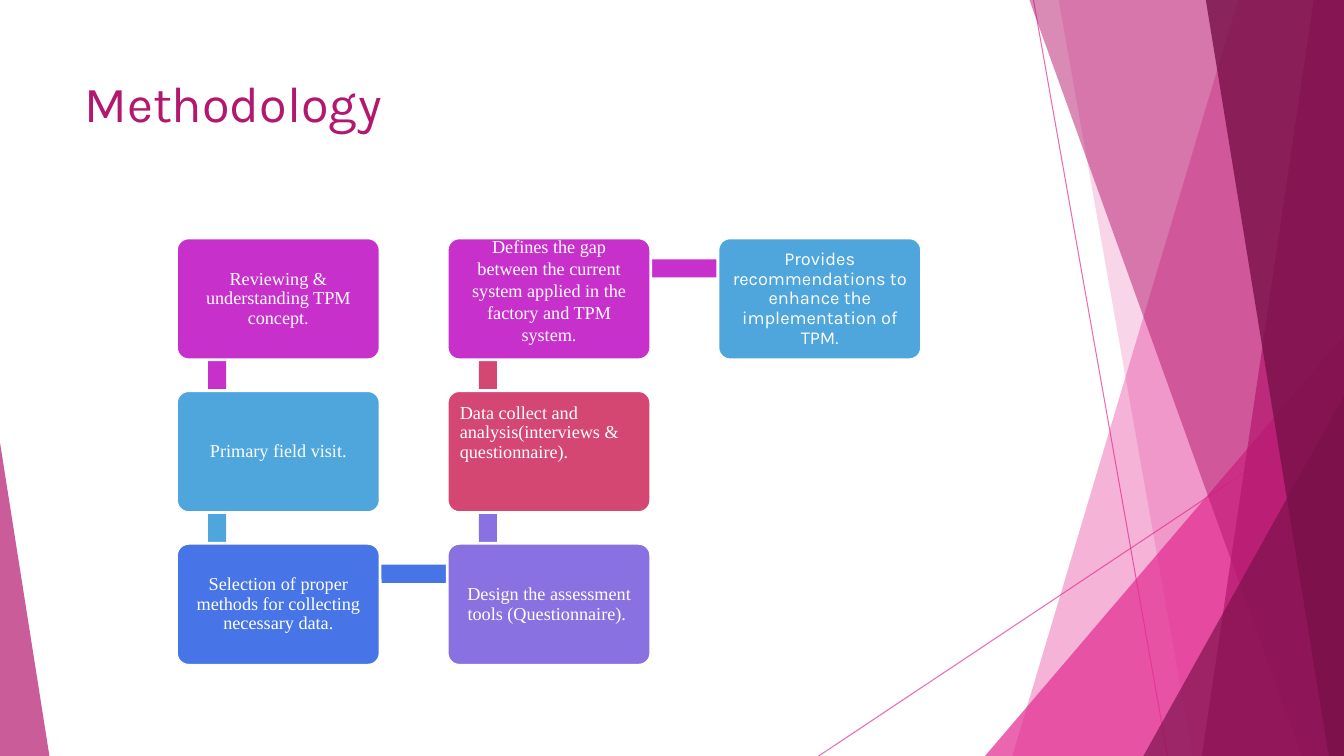
from lxml import etree
from pptx import Presentation
from pptx.dml.color import RGBColor
from pptx.enum.shapes import MSO_CONNECTOR, MSO_SHAPE
from pptx.enum.text import MSO_ANCHOR, PP_ALIGN
from pptx.oxml.ns import qn
from pptx.util import Inches, Pt

STRAIGHT = MSO_CONNECTOR.STRAIGHT
RECT, ROUND_RECT = MSO_SHAPE.RECTANGLE, MSO_SHAPE.ROUNDED_RECTANGLE
TRIANGLE = MSO_SHAPE.ISOSCELES_TRIANGLE
TOP, MIDDLE = MSO_ANCHOR.TOP, MSO_ANCHOR.MIDDLE
LEFT, CENTER = PP_ALIGN.LEFT, PP_ALIGN.CENTER

PINK = RGBColor(0xE3, 0x2D, 0x91)
BERRY = RGBColor(0xB4, 0x18, 0x6E)
PLUM = RGBColor(0x78, 0x10, 0x49)
MAGENTA = RGBColor(0xC8, 0x30, 0xCC)
SKY = RGBColor(0x4E, 0xA6, 0xDC)
BLUE = RGBColor(0x47, 0x75, 0xE7)
VIOLET = RGBColor(0x89, 0x71, 0xE1)
ROSE = RGBColor(0xD5, 0x47, 0x73)
WHITE = RGBColor(0xFF, 0xFF, 0xFF)
SERIF, SANS = "Times New Roman", "Karla"

SLIDE_W, SLIDE_H = 13.33, 7.5

# Column, row, colour, text and text format of each step, in reading order
STEPS = [
    (0, 0, MAGENTA, "Reviewing & understanding TPM concept.", {}),
    (0, 1, SKY, "Primary field visit.", {}),
    (0, 2, BLUE, "Selection of proper methods for collecting necessary data.", {}),
    (1, 2, VIOLET, "Design the assessment tools (Questionnaire). ", {}),
    (1, 1, ROSE, "Data collect and analysis(interviews & questionnaire).",
     {"align": LEFT, "anchor": TOP}),
    (1, 0, MAGENTA, "Defines the gap between the current system applied in the "
     "factory and TPM system.", {"spacing": 1.0, "bottom": 0.26}),
    (2, 0, SKY, "Provides recommendations to enhance the implementation of TPM.",
     {"font": SANS}),
]


def set_alpha(color_parent, percent):
    """Make the solid colour inside the given element partly transparent."""
    color = color_parent.find(".//" + qn("a:srgbClr"))
    etree.SubElement(color, qn("a:alpha")).set("val", str(percent * 1000))


def paint(sp, color, alpha=100):
    sp.shadow.inherit = False
    sp.fill.solid()
    sp.fill.fore_color.rgb = color
    sp.line.fill.background()
    if alpha < 100:
        set_alpha(sp._element.spPr, alpha)


def add_block(s, kind, box, color, alpha=100, adjust=None):
    sp = s.shapes.add_shape(kind, *(Inches(v) for v in box))
    if adjust is not None:
        sp.adjustments[0] = adjust
    paint(sp, color, alpha)
    return sp


def write(sp, text, size=13, font=SERIF, color=WHITE, align=CENTER,
          anchor=MIDDLE, spacing=0.9, side=0.09, top=0.09, bottom=0.09):
    tf = sp.text_frame
    tf.word_wrap = True
    tf.vertical_anchor = anchor
    tf.margin_left = tf.margin_right = Inches(side)
    tf.margin_top, tf.margin_bottom = Inches(top), Inches(bottom)
    p = tf.paragraphs[0]
    p.alignment, p.line_spacing = align, spacing
    r = p.add_run()
    r.text = text
    r.font.size, r.font.name = Pt(size), font
    r.font.color.rgb = color


def add_thin_line(s, x1, y1, x2, y2):
    line = s.shapes.add_connector(STRAIGHT, *(Inches(v) for v in (x1, y1, x2, y2)))
    line.line.color.rgb = PINK
    line.line.width = Pt(0.75)
    set_alpha(line.line._ln, 70)
    etree.SubElement(line._element.spPr, qn("a:effectLst"))


def add_facets(s, box):
    """Translucent facets that all share the right edge of the box."""
    x, y, w, h = box
    right, base = x + w, y + h

    def slanted(top_w, base_w, color, alpha):
        corners = [(right - top_w, y), (right, y), (right, base), (right - base_w, base)]
        points = [(Inches(px), Inches(py)) for px, py in corners]
        outline = s.shapes.build_freeform(*points[0])
        outline.add_line_segments(points[1:], close=True)
        paint(outline.convert_to_shape(), color, alpha)

    def wedge(width, height, color, alpha):
        add_block(s, TRIANGLE, (right - width, base - height, width, height),
                  color, alpha, adjust=1)

    add_thin_line(s, right - 3.08, y, right - 1.75, base)
    add_thin_line(s, right, y + 4.03, x, base)
    slanted(1.05, 3.29, PINK, 36)
    slanted(2.83, 1.5, PINK, 20)
    wedge(3.56, 4.17, PINK, 72)
    slanted(3.12, 0.42, BERRY, 50)
    slanted(0.3, 1.41, BERRY, 70)
    slanted(1.37, 0.15, PLUM, 80)
    wedge(1.99, 3.57, PLUM, 66)


def add_left_wedge(s, box):
    add_block(s, TRIANGLE, box, BERRY, 70, adjust=0)


def add_title(s, box, text):
    sp = s.shapes.add_textbox(*(Inches(v) for v in box))
    write(sp, text, size=36, font=SANS, color=BERRY, align=LEFT, anchor=TOP,
          spacing=1.0, side=0.1, top=0.05, bottom=0.05)


def add_flow(s, box):
    """Snake of steps on a 3 by 3 grid, each joined to the next by a bar."""
    x, y, w, h = box
    step_w, step_h, bar = 2.02, 1.21, 0.18
    pitch_x, pitch_y = (w - step_w) / 2, (h - step_h) / 2

    def corner(step):
        return x + step[0] * pitch_x, y + step[1] * pitch_y

    for step, following in zip(STEPS, STEPS[1:] + [None]):
        left, top = corner(step)
        color, text, style = step[2:]
        if following:
            next_left, next_top = corner(following)
            dx, dy = abs(next_left - left), abs(next_top - top)
            bar_x = min(left, next_left) + step_w / 5 - (bar / 2 if dy else 0)
            bar_y = min(top, next_top) + step_h / 4 - (bar / 2 if dx else 0)
            add_block(s, RECT, (bar_x, bar_y, dx or bar, dy or bar), color)
        sp = add_block(s, ROUND_RECT, (left, top, step_w, step_h), color, adjust=0.1)
        sp.line.color.rgb = WHITE
        sp.line.width = Pt(2)
        write(sp, text, **style)


def main():
    prs = Presentation()
    prs.slide_width, prs.slide_height = Inches(SLIDE_W), Inches(SLIDE_H)
    s = prs.slides.add_slide(prs.slide_layouts[6])
    add_facets(s, (8.12, 0, SLIDE_W - 8.12, SLIDE_H))
    add_left_wedge(s, (0, 4.39, 0.49, SLIDE_H - 4.39))
    add_title(s, (0.74, 0.67, 9.4, 1.44), "Methodology")
    add_flow(s, (1.75, 2.36, 7.39, 4.24))
    prs.save("out.pptx")


if __name__ == "__main__":
    main()
